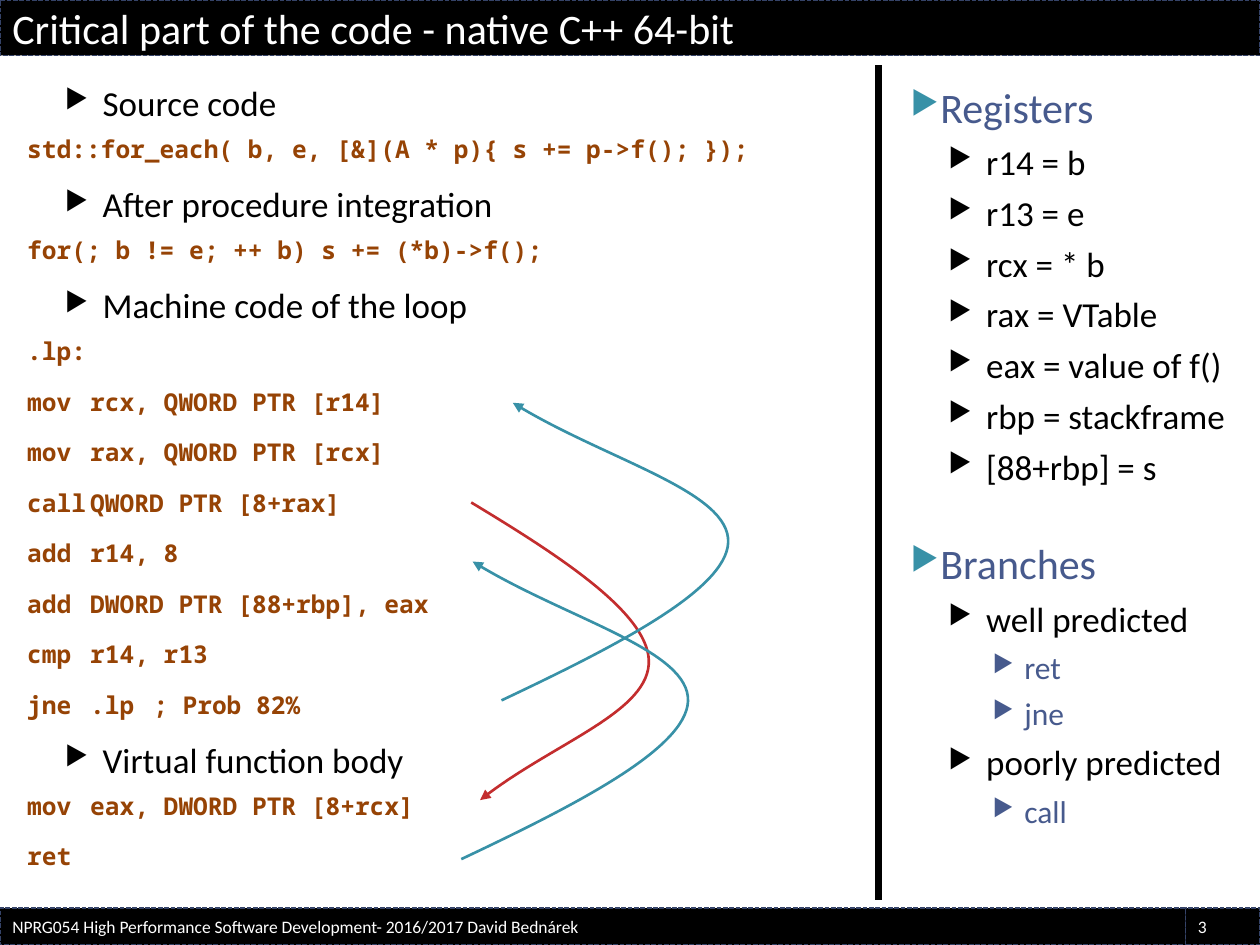
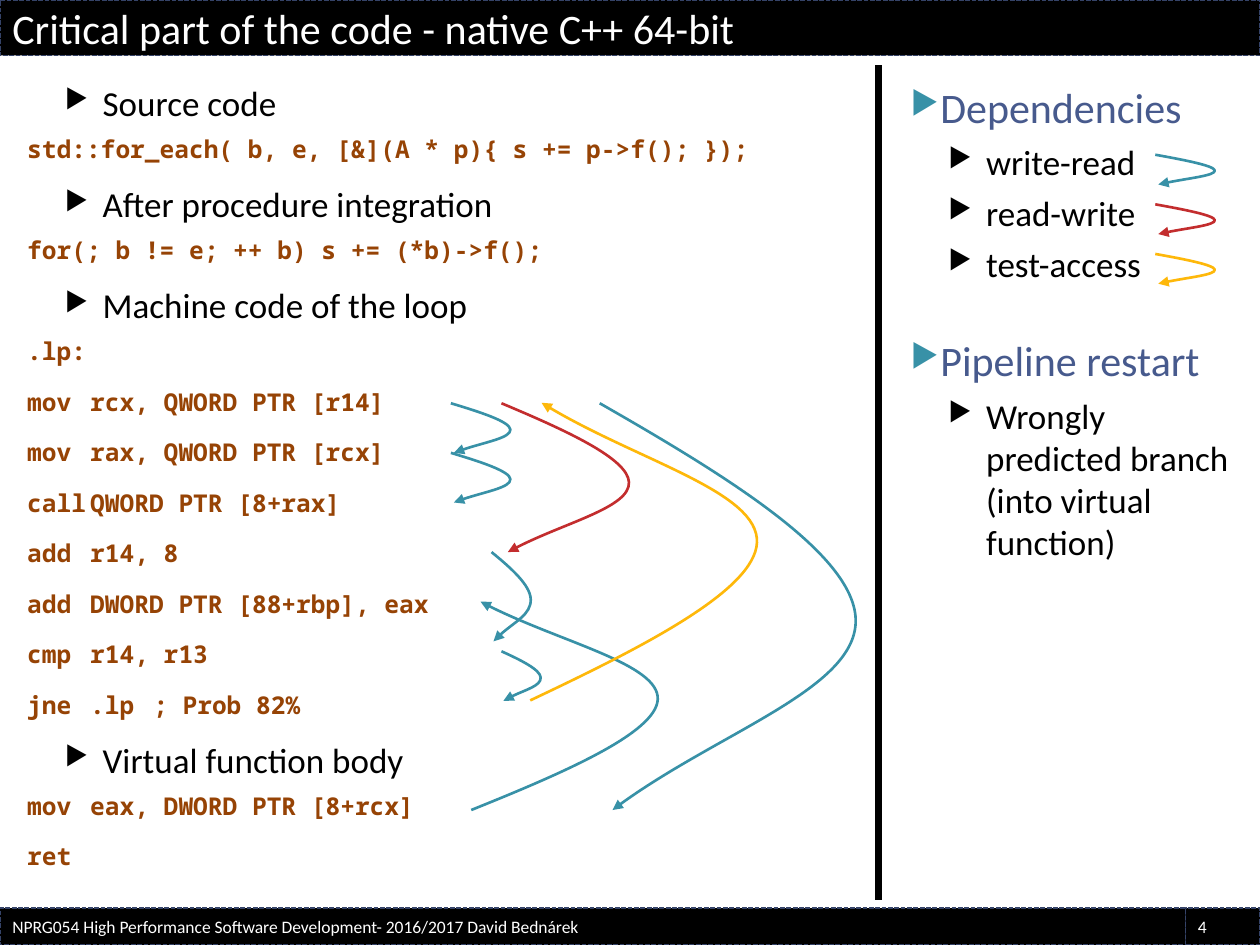
import lxml.etree
import pptx
import pptx.dml.color
import pptx.enum.dml
import pptx.enum.shapes
import pptx.enum.text
import pptx.oxml.ns
import pptx.util

Cm = pptx.util.Cm
Pt = pptx.util.Pt
RGBColor = pptx.dml.color.RGBColor
qn = pptx.oxml.ns.qn

BLACK = RGBColor(0x00, 0x00, 0x00)
WHITE = RGBColor(0xFF, 0xFF, 0xFF)
SLATE = RGBColor(0x47, 0x5A, 0x8D)
BAND_EDGE = RGBColor(0x35, 0x43, 0x68)
TEAL = RGBColor(0x38, 0x91, 0xA7)
RED = RGBColor(0xC3, 0x2D, 0x2E)
AMBER = RGBColor(0xFE, 0xB8, 0x0A)
BROWN = RGBColor(0x96, 0x43, 0x05)

BODY_FONT = "Calibri"
CODE_FONT = "Noto Sans Mono"
PAGE_WIDTH, PAGE_HEIGHT = 25.4, 19.05
TITLE_HEIGHT, FOOTER_HEIGHT, NUMBER_WIDTH = 1.12, 0.74, 1.5
BODY_TOP, BODY_HEIGHT = 1.52, 16.41
DIVIDER_X = 17.7

TITLE = "Critical part of the code - native C++ 64-bit"
FOOTER = "NPRG054 High Performance Software Development- 2016/2017 David Bednárek"

HEADING = dict(size=24, color=SLATE, bullet=TEAL)
STYLES = {
    "heading": HEADING,
    "next heading": dict(HEADING, before=29),
    "item": dict(size=20, bullet=BLACK, margin=1.52, hanging=0.76, before=5),
    "detail": dict(size=18, color=SLATE, bullet=SLATE, margin=2.29, hanging=0.64, before=5),
    "code": dict(size=14, color=BROWN, font=CODE_FONT, bold=True, before=6, after=6,
                 line_height=16.8, tabs=(2.96, 5.63)),
}

CODE_LINES = [
    ("item", "Source code"),
    ("code", "std::for_each( b, e, [&](A * p){ s += p->f(); });"),
    ("item", "After procedure integration"),
    ("code", "for(; b != e; ++ b) s += (*b)->f();"),
    ("item", "Machine code of the loop"),
    ("code", ".lp:"),
    ("code", "mov\trcx, QWORD PTR [r14]"),
    ("code", "mov\trax, QWORD PTR [rcx]"),
    ("code", "call\tQWORD PTR [8+rax]"),
    ("code", "add\tr14, 8"),
    ("code", "add\tDWORD PTR [88+rbp], eax"),
    ("code", "cmp\tr14, r13"),
    ("code", "jne\t.lp\t; Prob 82%"),
    ("item", "Virtual function body"),
    ("code", "mov\teax, DWORD PTR [8+rcx]"),
    ("code", "ret"),
]
REGISTERS_AND_BRANCHES = [
    ("heading", "Registers"),
    ("item", "r14 = b"),
    ("item", "r13 = e"),
    ("item", "rcx = * b"),
    ("item", "rax = VTable"),
    ("item", "eax = value of f()"),
    ("item", "rbp = stackframe"),
    ("item", "[88+rbp] = s"),
    ("next heading", "Branches"),
    ("item", "well predicted"),
    ("detail", "ret"),
    ("detail", "jne"),
    ("item", "poorly predicted"),
    ("detail", "call"),
]
DEPENDENCIES = [
    ("heading", "Dependencies"),
    ("item", "write-read"),
    ("item", "read-write"),
    ("item", "test-access"),
    ("next heading", "Pipeline restart"),
    ("item", "Wrongly predicted branch (into virtual function)"),
]

BRANCH_ARROWS = [
    (9.5, 10.13, 3.58, 6, RED),
    (9.3, 17.32, 4.57, -6, TEAL),
    (10.11, 14.12, 4.57, -6, TEAL),
]
DEPENDENCY_ARROWS = [
    (9.09, 8.13, 1.2, 1, TEAL),
    (9.09, 9.13, 1.2, 1, TEAL),
    (9.5, 16.33, 3.76, -4.2, TEAL),
    (10.69, 14.12, 4.57, -6, AMBER),
    (10.11, 13.13, 0.79, 1, TEAL),
    (9.91, 11.13, 0.79, 1.8, TEAL),
    (10.11, 8.13, 2.57, 3, RED),
    (12.09, 8.13, 5.16, 8.2, TEAL),
]
LEGEND_ARROWS = [(23.29, 3.12 + row, 1.2, 0.6, color)
                 for row, color in enumerate((TEAL, RED, AMBER))]

ARROW_CURVE = [(0.5, 0.18), (0.99, 0.37), (1, 0.53), (1.01, 0.7), (0.45, 0.81), (0.05, 1)]


def add_child(parent, tag, **attributes):
    """Append a drawing element with the given attributes."""
    return lxml.etree.SubElement(parent, qn(tag), attributes)


def write_text(para, text, size=20, color=BLACK, font=BODY_FONT, bold=False, bullet=None,
               margin=0, hanging=0, before=0, after=0, line_height=None, tabs=()):
    """Write one formatted paragraph."""
    para.alignment = pptx.enum.text.PP_ALIGN.LEFT
    para.space_before, para.space_after = Pt(before), Pt(after)
    if line_height:
        para.line_spacing = Pt(line_height)
    properties = para._p.get_or_add_pPr()
    properties.set("marL", str(Cm(margin)))
    properties.set("indent", str(-Cm(hanging)))
    if bullet is not None:
        add_child(add_child(properties, "a:buClr"), "a:srgbClr", val=str(bullet))
        add_child(properties, "a:buSzPct", val="76000")
        add_child(properties, "a:buChar", char="▶")
    if tabs:
        stops = add_child(properties, "a:tabLst")
        for stop in tabs:
            add_child(stops, "a:tab", pos=str(Cm(stop)), algn="l")
    span = para.add_run()
    span.text = text
    span.font.name, span.font.size, span.font.bold = font, Pt(size), bold
    span.font.color.rgb = color


def add_band(page, left, top, width, height, text, size):
    """Add a black band with white text."""
    band = page.shapes.add_shape(pptx.enum.shapes.MSO_SHAPE.RECTANGLE,
                                 Cm(left), Cm(top), Cm(width), Cm(height))
    band.shadow.inherit = False
    band.fill.solid()
    band.fill.fore_color.rgb = BLACK
    band.line.color.rgb = BAND_EDGE
    band.line.width = Pt(0.9)
    band.line.dash_style = pptx.enum.dml.MSO_LINE.SQUARE_DOT
    band.text_frame.word_wrap = True
    band.text_frame.vertical_anchor = pptx.enum.text.MSO_ANCHOR.MIDDLE
    write_text(band.text_frame.paragraphs[0], text, size=size, color=WHITE)


def add_divider(page):
    """Add the thick vertical line between the columns."""
    divider = page.shapes.add_connector(pptx.enum.shapes.MSO_CONNECTOR.STRAIGHT,
                                        Cm(DIVIDER_X), Cm(1.32), Cm(DIVIDER_X), Cm(18.14))
    divider.line.color.rgb = BLACK
    divider.line.width = Pt(4)
    add_child(divider.element.spPr, "a:effectLst")


def add_column(page, left, width, lines):
    """Add a column of styled paragraphs."""
    box = page.shapes.add_textbox(Cm(left), Cm(BODY_TOP), Cm(width), Cm(BODY_HEIGHT))
    frame = box.text_frame
    frame.word_wrap = True
    for index, (style, text) in enumerate(lines):
        para = frame.add_paragraph() if index else frame.paragraphs[0]
        write_text(para, text, **STYLES[style])


def add_curved_arrow(page, left, start, width, rise, color):
    """Add an arrow that bulges right and ends the given rise below its start."""
    points = [(Cm(left + x * width), Cm(start + y * rise)) for x, y in ARROW_CURVE]
    builder = page.shapes.build_freeform(Cm(left), Cm(start))
    builder.add_line_segments(points, close=False)
    arrow = builder.convert_to_shape()
    outline = next(arrow.element.iter(qn("a:path")))
    segments = outline.findall(qn("a:lnTo"))
    for first in range(0, len(segments), 3):
        curve = add_child(outline, "a:cubicBezTo")
        for segment in segments[first:first + 3]:
            curve.append(segment[0])
            outline.remove(segment)
    arrow.shadow.inherit = False
    arrow.fill.background()
    arrow.line.color.rgb = color
    arrow.line.width = Pt(1.5)
    add_child(arrow.line._get_or_add_ln(), "a:tailEnd", type="triangle")


def add_code_page(deck, number, side_lines, arrows):
    """Add a page with the code, a side column and arrows."""
    page = deck.slides.add_slide(deck.slide_layouts[6])
    add_divider(page)
    add_column(page, 18.11, 7.01, side_lines)
    add_column(page, 0.3, 16.99, CODE_LINES)
    footer_top = PAGE_HEIGHT - FOOTER_HEIGHT
    footer_width = PAGE_WIDTH - NUMBER_WIDTH
    add_band(page, 0, 0, PAGE_WIDTH, TITLE_HEIGHT, TITLE, 24)
    add_band(page, footer_width, footer_top, NUMBER_WIDTH, FOOTER_HEIGHT, str(number), 10)
    add_band(page, 0, footer_top, footer_width, FOOTER_HEIGHT, FOOTER, 10)
    for arrow in arrows:
        add_curved_arrow(page, *arrow)


def main():
    """Build the deck and save it."""
    deck = pptx.Presentation()
    deck.slide_width, deck.slide_height = Cm(PAGE_WIDTH), Cm(PAGE_HEIGHT)
    add_code_page(deck, 3, REGISTERS_AND_BRANCHES, BRANCH_ARROWS)
    add_code_page(deck, 4, DEPENDENCIES, DEPENDENCY_ARROWS + LEGEND_ARROWS)
    deck.save("out.pptx")


if __name__ == "__main__":
    main()
